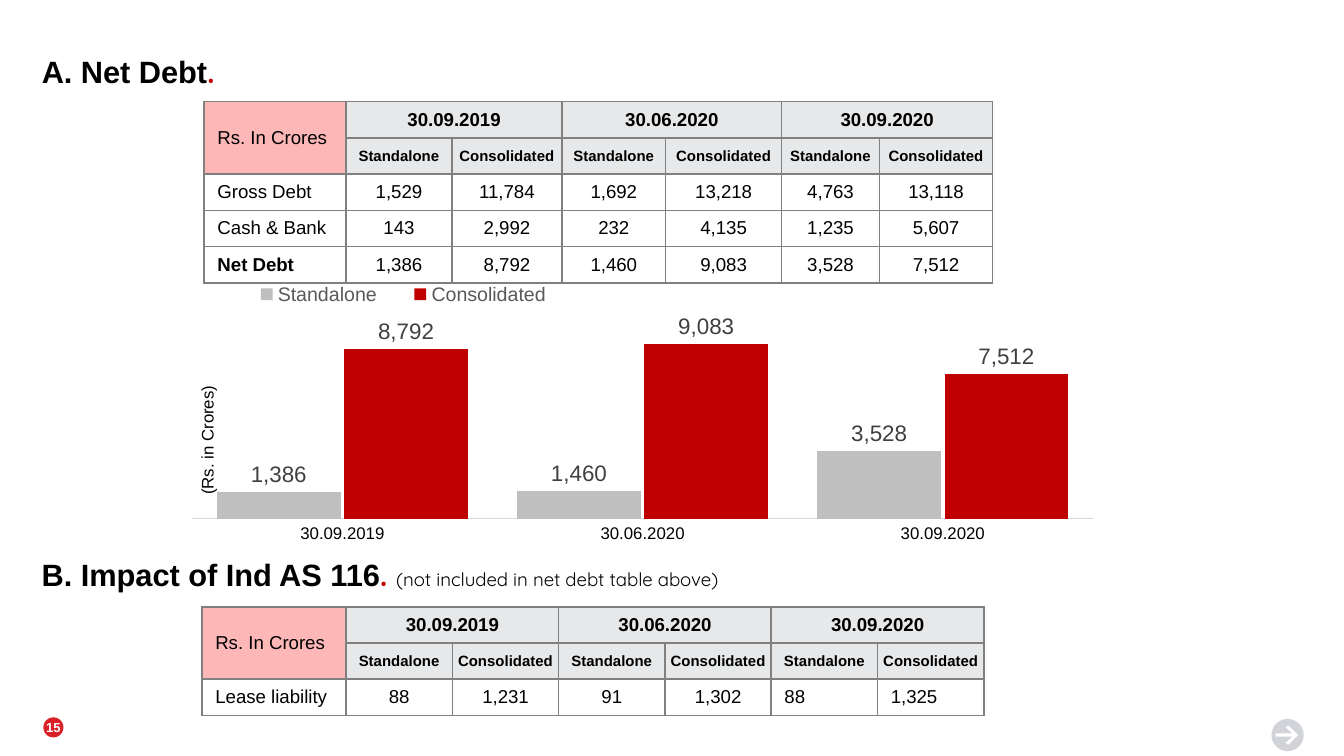
from dataclasses import dataclass

from lxml.etree import SubElement
from pptx import Presentation
from pptx.chart.data import CategoryChartData
from pptx.dml.color import RGBColor
from pptx.enum.chart import XL_LABEL_POSITION as LabelPos
from pptx.enum.chart import XL_CHART_TYPE as ChartType
from pptx.enum.chart import XL_LEGEND_POSITION as LegendPos
from pptx.enum.chart import XL_TICK_LABEL_POSITION as TickLabelPos
from pptx.enum.chart import XL_TICK_MARK as TickMark
from pptx.enum.shapes import MSO_SHAPE as Shape
from pptx.enum.text import MSO_ANCHOR as Anchor
from pptx.enum.text import MSO_AUTO_SIZE as AutoSize
from pptx.enum.text import PP_ALIGN as Align
from pptx.oxml import parse_xml
from pptx.oxml.ns import nsdecls, qn
from pptx.util import Cm, Pt


@dataclass(frozen=True)
class Theme:
    font: str = "Arial"
    accent_font: str = "Quicksand"
    black: str = "000000"
    white: str = "FFFFFF"
    accent: str = "C00000"
    badge: str = "DA2128"
    icon: str = "D1D3D9"
    corner: str = "FDB7B7"
    header: str = "E7E8E9"
    border: str = "808080"
    axis: str = "D9D9D9"
    bar: str = "BFBFBF"
    legend: str = "595959"
    label: str = "404040"
    heading_size: float = 16.5
    body_size: float = 10
    small_size: float = 8
    axis_size: float = 9
    legend_size: float = 10.5
    label_size: float = 12
    badge_size: float = 7


THEME = Theme()
DATES = ["30.09.2019", "30.06.2020", "30.09.2020"]
SCOPES = ["Standalone", "Consolidated"]
GROSS = ["1,529", "11,784", "1,692", "13,218", "4,763", "13,118"]
CASH = ["143", "2,992", "232", "4,135", "1,235", "5,607"]
NET = [1386, 8792, 1460, 9083, 3528, 7512]
LEASE = ["88", "1,231", "91", "1,302", "88", "1,325"]


def style_font(font, size, color=THEME.black, bold=False, name=THEME.font):
    font.name, font.size, font.bold = name, Pt(size), bold
    font.color.rgb = RGBColor.from_string(color)


def add_span(para, text, size, **style):
    span = para.add_run()
    span.text = text
    style_font(span.font, size, **style)


def clear_insets(frame):
    frame.margin_left = frame.margin_right = frame.margin_top = frame.margin_bottom = 0


def place(shape, box):
    shape.left, shape.top, shape.width, shape.height = (Cm(value) for value in box)


def paint(shape, color):
    shape.fill.solid()
    shape.fill.fore_color.rgb = RGBColor.from_string(color)
    shape.line.fill.background()
    shape.shadow.inherit = False


def fill_heading(shape, box, text, note=""):
    """Bold heading closed by a red full stop, with an optional light note."""
    place(shape, box)
    frame = shape.text_frame
    clear_insets(frame)
    frame.word_wrap, frame.auto_size = True, AutoSize.NONE
    frame.vertical_anchor = Anchor.BOTTOM
    para = frame.paragraphs[0]
    para.alignment, para.line_spacing = Align.LEFT, 0.9
    add_span(para, text, THEME.heading_size, bold=True)
    add_span(para, ". " if note else ".", THEME.heading_size, color=THEME.accent,
             bold=True, name=THEME.accent_font)
    if note:
        add_span(para, note, THEME.body_size, name=THEME.accent_font)


def fill_cell(cell, text, fill=None, size=THEME.body_size, bold=False,
              align=Align.CENTER, left=0.25, right=0.25):
    cell.vertical_anchor = Anchor.MIDDLE
    cell.margin_left, cell.margin_right = Cm(left), Cm(right)
    cell.margin_top = cell.margin_bottom = Cm(0.13)
    if text:
        para = cell.text_frame.paragraphs[0]
        para.alignment = align
        add_span(para, text, size, bold=bold)
    if fill:
        cell.fill.solid()
        cell.fill.fore_color.rgb = RGBColor.from_string(fill)
    else:
        cell.fill.background()
    properties = cell._tc.get_or_add_tcPr()
    for index, side in enumerate(("lnL", "lnR", "lnT", "lnB")):
        properties.insert(index, parse_xml(
            f'<a:{side} {nsdecls("a")} w="{Pt(1)}"><a:solidFill>'
            f'<a:srgbClr val="{THEME.border}"/></a:solidFill></a:{side}>'))


def add_debt_table(page, box, widths, rows, left_aligned=()):
    """Two header rows (dates over scopes), then one row per (label, bold, values)."""
    count = len(rows) + 2
    table = page.shapes.add_table(count, len(widths), *(Cm(v) for v in box)).table
    table.first_row = table.horz_banding = False
    for column, width in zip(table.columns, widths):
        column.width = Cm(width)
    for row in table.rows:
        row.height = Cm(box[3] / count)

    label_style = dict(align=Align.LEFT, right=0.1)
    fill_cell(table.cell(0, 0), "Rs. In Crores", THEME.corner, **label_style)
    fill_cell(table.cell(1, 0), "", THEME.corner)
    table.cell(0, 0).merge(table.cell(1, 0))
    for index, date in enumerate(DATES):
        first = 1 + index * len(SCOPES)
        for offset, scope in enumerate(SCOPES):
            fill_cell(table.cell(0, first + offset), "" if offset else date,
                      THEME.header, bold=True)
            fill_cell(table.cell(1, first + offset), scope, THEME.header,
                      THEME.small_size, True, left=0.1, right=0.1)
        table.cell(0, first).merge(table.cell(0, first + 1))
    for number, (label, bold, values) in enumerate(rows, 2):
        fill_cell(table.cell(number, 0), label, bold=bold, **label_style)
        for column, value in enumerate(values, 1):
            align = Align.LEFT if column in left_aligned else Align.CENTER
            fill_cell(table.cell(number, column), value, align=align)


def add_axis_caption(page, box):
    caption = page.shapes.add_textbox(*(Cm(v) for v in box))
    caption.rotation = 270
    caption.text_frame.word_wrap = True
    para = caption.text_frame.paragraphs[0]
    para.alignment = Align.CENTER
    add_span(para, "(Rs. in Crores)", THEME.axis_size)


def set_layout(parent, before, inner=False, **fractions):
    """Fix a chart part at fractions of the chart area."""
    for old in parent.findall(qn("c:layout")):
        parent.remove(old)
    layout = parse_xml(f'<c:layout {nsdecls("c")}/>')
    manual = SubElement(layout, qn("c:manualLayout"))
    if inner:
        SubElement(manual, qn("c:layoutTarget")).set("val", "inner")
    for name in ("xMode", "yMode"):
        SubElement(manual, qn(f"c:{name}")).set("val", "edge")
    for name, value in fractions.items():
        SubElement(manual, qn(f"c:{name}")).set("val", str(value))
    parent.find(qn(before)).addprevious(layout)


def add_debt_chart(page, box):
    data = CategoryChartData(number_format="#,##0")
    data.categories = DATES
    for index, scope in enumerate(SCOPES):
        data.add_series(scope, NET[index::len(SCOPES)])
    chart = page.shapes.add_chart(ChartType.COLUMN_CLUSTERED,
                                  *(Cm(v) for v in box), data).chart
    chart.has_title = False
    style_font(chart.font, THEME.body_size)
    chart._chartSpace.find(qn("c:txPr")).addprevious(parse_xml(
        f'<c:spPr {nsdecls("c", "a")}><a:noFill/><a:ln><a:noFill/></a:ln></c:spPr>'))

    plot = chart.plots[0]
    plot.gap_width, plot.overlap, plot.vary_by_categories = 40, -3, False
    for series, color in zip(plot.series, (THEME.bar, THEME.accent)):
        series.format.fill.solid()
        series.format.fill.fore_color.rgb = RGBColor.from_string(color)
        labels = series.data_labels
        labels.show_value, labels.position = True, LabelPos.OUTSIDE_END
        labels.number_format, labels.number_format_is_linked = "#,##0", False
        style_font(labels.font, THEME.label_size, THEME.label)

    dates, amounts = chart.category_axis, chart.value_axis
    dates.major_tick_mark = amounts.major_tick_mark = TickMark.NONE
    style_font(dates.tick_labels.font, THEME.axis_size)
    dates.format.line.color.rgb = RGBColor.from_string(THEME.axis)
    dates.format.line.width = Pt(0.75)
    amounts.minimum_scale, amounts.maximum_scale = 0, 10000
    amounts.has_major_gridlines = False
    amounts.tick_label_position = TickLabelPos.NONE
    amounts.format.line.fill.background()

    chart.has_legend = True
    legend = chart.legend
    legend.position, legend.include_in_layout = LegendPos.TOP, False
    style_font(legend.font, THEME.legend_size, THEME.legend)
    set_layout(legend._element, "c:overlay", x=0.06, y=0.09, w=0.37, h=0.12)
    set_layout(chart._chartSpace.chart.plotArea, "c:barChart", inner=True,
               x=0.02, y=0.25, w=0.96, h=0.6)


def add_page_badge(page, box, number):
    left, top, width, height = box
    size = 0.38
    disc = page.shapes.add_shape(Shape.OVAL, Cm(left + (width - size) / 2),
                                 Cm(top + (height - size) / 2), Cm(size), Cm(size))
    paint(disc, THEME.badge)
    frame = page.shapes.add_textbox(*(Cm(v) for v in box)).text_frame
    clear_insets(frame)
    frame.word_wrap, frame.vertical_anchor = True, Anchor.MIDDLE
    para = frame.paragraphs[0]
    para.alignment = Align.CENTER
    add_span(para, number, THEME.badge_size, color=THEME.white, bold=True)


def add_next_icon(page, box):
    left, top, width, height = box
    paint(page.shapes.add_shape(Shape.OVAL, *(Cm(v) for v in box)), THEME.icon)
    upper = [(0.13, 0.45), (0.64, 0.45), (0.44, 0.26), (0.52, 0.2), (0.83, 0.5)]
    outline = upper + [(x, 1 - y) for x, y in reversed(upper[:-1])]
    points = [(Cm(left + x * width), Cm(top + y * height)) for x, y in outline]
    builder = page.shapes.build_freeform(*points[0])
    builder.add_line_segments(points[1:], close=True)
    paint(builder.convert_to_shape(), THEME.white)


def build_debt_page(deck):
    page = deck.slides.add_slide(deck.slide_layouts[5])
    add_page_badge(page, (0.64, 13.51, 0.74, 0.48), "15")
    add_next_icon(page, (24.03, 13.59, 0.61, 0.61))
    fill_heading(page.shapes.title, (0.79, 0.61, 21, 1.09), "A. Net Debt")
    add_debt_table(page, (3.86, 1.92, 14.9, 3.28),
                   (2.68, 2, 2.08, 1.96, 2.19, 1.85, 2.14),
                   [("Gross Debt", False, GROSS), ("Cash & Bank", False, CASH),
                    ("Net Debt", True, [f"{value:,}" for value in NET])])
    add_axis_caption(page, (2.39, 8, 3.05, 0.64))
    heading = page.shapes.add_textbox(0, 0, 0, 0)
    fill_heading(heading, (0.79, 10.13, 21, 1.09), "B. Impact of Ind AS 116",
                 "(not included in net debt table above)")
    add_debt_table(page, (3.82, 11.47, 14.78, 2.04), [2.72] + [2.01] * 6,
                   [("Lease liability", False, LEASE)], left_aligned=(5, 6))
    add_debt_chart(page, (3.28, 4.65, 17.73, 6.07))


def main():
    deck = Presentation()
    deck.slide_width, deck.slide_height = Cm(25.4), Cm(14.29)
    build_debt_page(deck)
    deck.save("out.pptx")


if __name__ == "__main__":
    main()
